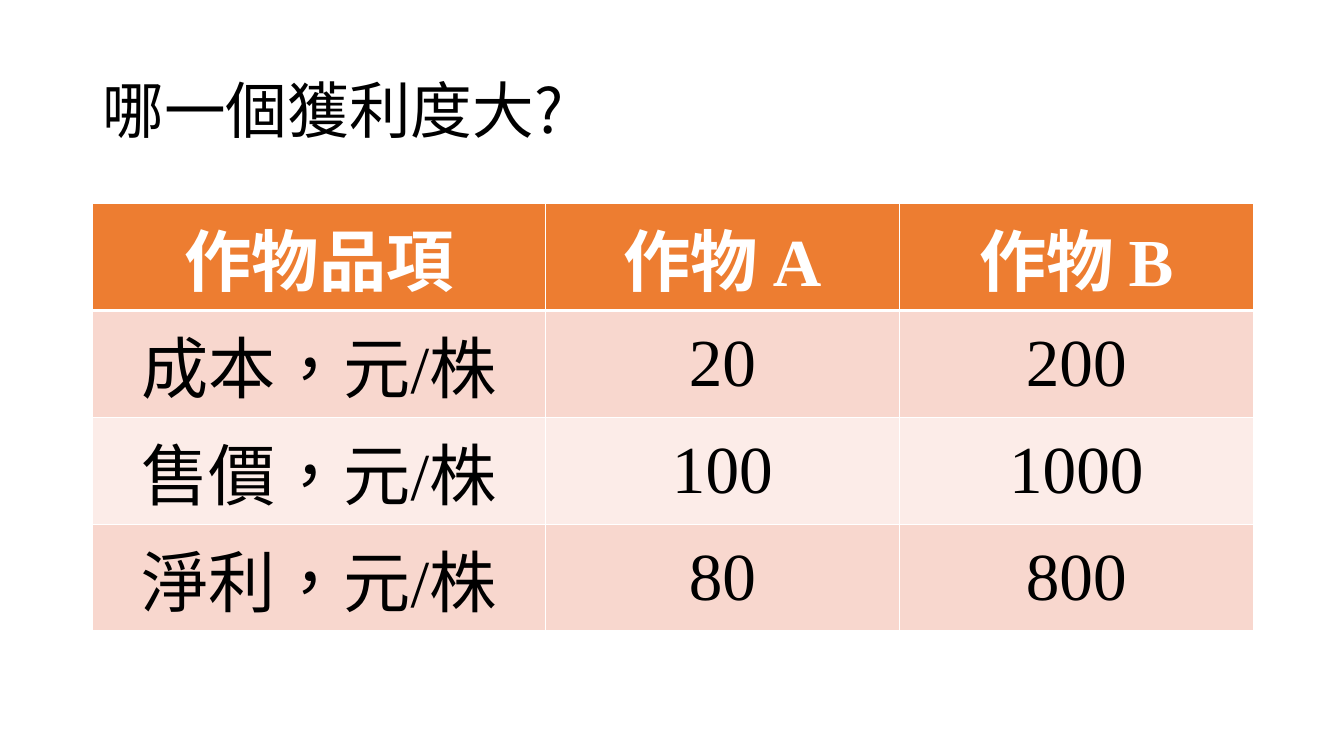
from lxml import etree
from pptx import Presentation
from pptx.dml.color import RGBColor
from pptx.enum.lang import MSO_LANGUAGE_ID
from pptx.enum.text import MSO_ANCHOR, PP_ALIGN
from pptx.oxml.ns import qn
from pptx.util import Inches, Pt

MIDDLE = MSO_ANCHOR.MIDDLE
CENTER = PP_ALIGN.CENTER
LEFT = PP_ALIGN.LEFT
TAIWAN_CHINESE = MSO_LANGUAGE_ID.TRADITIONAL_CHINESE

BLACK = RGBColor(0x00, 0x00, 0x00)
WHITE = RGBColor(0xFF, 0xFF, 0xFF)
ORANGE = RGBColor(0xED, 0x7D, 0x31)
PEACH = RGBColor(0xF8, 0xD7, 0xCE)
PALE_PEACH = RGBColor(0xFC, 0xEC, 0xE8)

CHINESE_FONT = "Noto Sans CJK SC"
LATIN_FONT = "Times New Roman"


def write_text(frame, text, size, color=BLACK, font=CHINESE_FONT, bold=False, align=LEFT):
    paragraph = frame.paragraphs[0]
    paragraph.alignment = align
    run = paragraph.add_run()
    run.text = text
    run.font.size = Pt(size)
    run.font.bold = bold
    run.font.color.rgb = color
    run.font.name = font
    run.font.language_id = TAIWAN_CHINESE
    east_asian = etree.SubElement(run.font._element, qn("a:ea"))
    east_asian.set("typeface", CHINESE_FONT)
    return paragraph


def set_borders(cell, bottom_width):
    """Draw white cell borders; their XML must precede the fill."""
    properties = cell._tc.get_or_add_tcPr()
    widths = {"a:lnL": 1, "a:lnR": 1, "a:lnT": 1, "a:lnB": bottom_width}
    for index, (side, width) in enumerate(widths.items()):
        line = etree.Element(qn(side), w=str(Pt(width)))
        fill = etree.SubElement(line, qn("a:solidFill"))
        etree.SubElement(fill, qn("a:srgbClr"), val=str(WHITE))
        properties.insert(index, line)


presentation = Presentation()
presentation.slide_width = Inches(13.33)
presentation.slide_height = Inches(7.5)
slide = presentation.slides.add_slide(presentation.slide_layouts[6])

question = slide.shapes.add_textbox(Inches(0.92), Inches(0.4), Inches(11.5), Inches(1.45)).text_frame
question.word_wrap = True
question.vertical_anchor = MIDDLE
write_text(question, "哪一個獲利度大?", 44).line_spacing = 0.9

crop_rows = [
    ("作物品項", "作物 A", "作物 B"),
    ("成本，元/株", "20", "200"),
    ("售價，元/株", "100", "1000"),
    ("淨利，元/株", "80", "800"),
]
column_widths = [4.49, 3.51, 3.51]
row_height = 1.06

crop_table = slide.shapes.add_table(
    len(crop_rows), len(column_widths), Inches(0.92), Inches(2.02),
    Inches(sum(column_widths)), Inches(row_height * len(crop_rows)),
).table
for column, width in zip(crop_table.columns, column_widths):
    column.width = Inches(width)

for row_index, values in enumerate(crop_rows):
    crop_table.rows[row_index].height = Inches(row_height)
    is_header = row_index == 0
    band = ORANGE if is_header else (PEACH if row_index % 2 else PALE_PEACH)
    for column_index, value in enumerate(values):
        cell = crop_table.cell(row_index, column_index)
        cell.vertical_anchor = MIDDLE
        cell.fill.solid()
        cell.fill.fore_color.rgb = band
        set_borders(cell, bottom_width=3 if is_header else 1)
        write_text(cell.text_frame, value, 48, color=WHITE if is_header else BLACK,
                   font=LATIN_FONT, bold=is_header, align=CENTER)

presentation.save("out.pptx")
